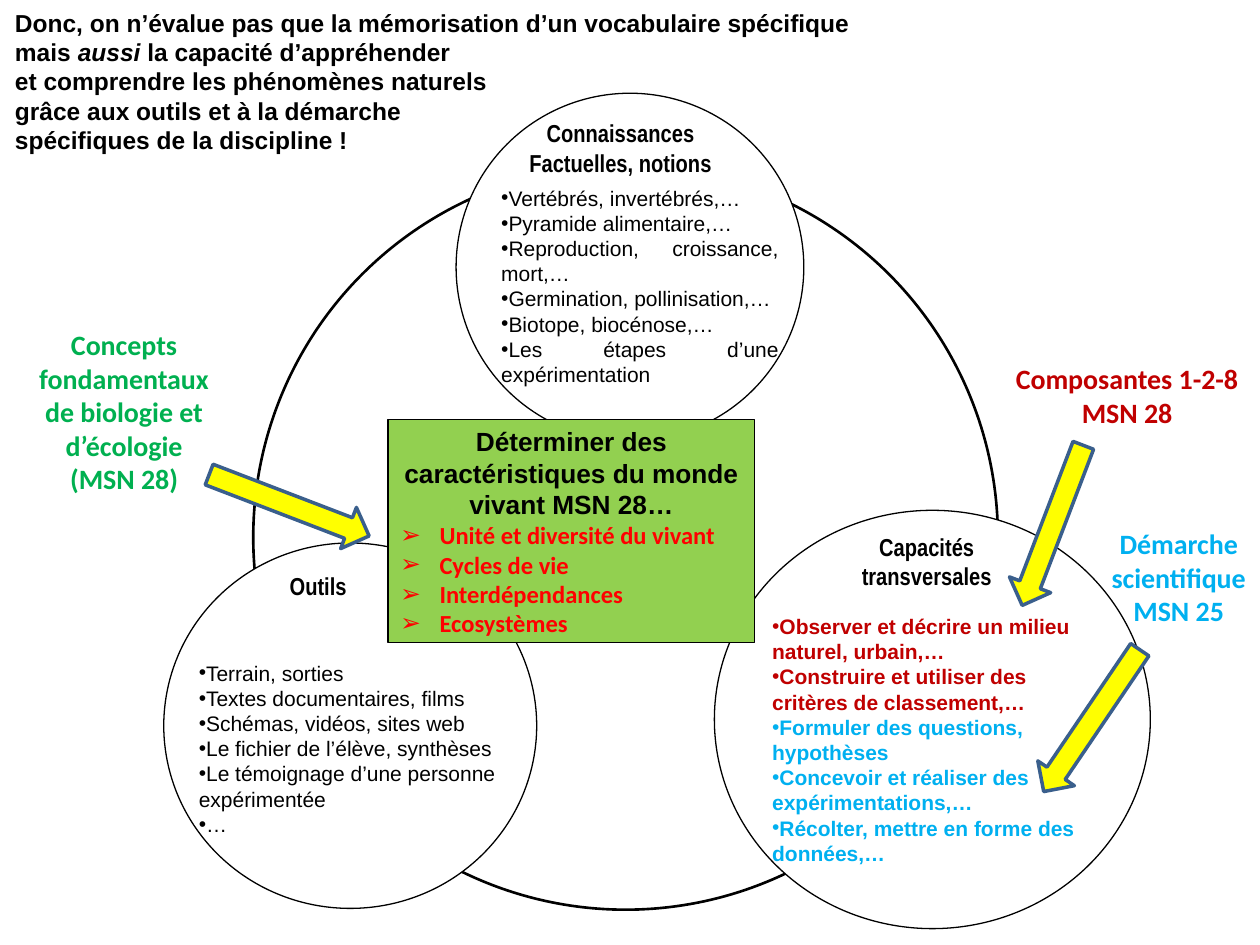
"""Build a slide of circles showing what is assessed in life sciences."""
import pptx
import pptx.dml.color
import pptx.enum.shapes
import pptx.enum.text
import pptx.oxml.ns
import pptx.util
import lxml.etree

Inches = pptx.util.Inches
Pt = pptx.util.Pt
RGBColor = pptx.dml.color.RGBColor
SHAPE = pptx.enum.shapes.MSO_SHAPE
ALIGN = pptx.enum.text.PP_ALIGN

BLACK = RGBColor(0x00, 0x00, 0x00)
WHITE = RGBColor(0xFF, 0xFF, 0xFF)
CRIMSON = RGBColor(0xC0, 0x00, 0x00)
RED = RGBColor(0xFF, 0x00, 0x00)
BLUE = RGBColor(0x00, 0xB0, 0xF0)
GREEN = RGBColor(0x00, 0xB0, 0x50)
LIME = RGBColor(0x92, 0xD0, 0x50)
YELLOW = RGBColor(0xFF, 0xFF, 0x00)
NAVY = RGBColor(0x3A, 0x5F, 0x8C)

TITLE = {"name": "Arial", "size": Pt(14), "bold": True}
HEAD = {"name": "Arial Narrow", "size": Pt(14), "bold": True}
BODY = {"name": "Arial", "size": Pt(12), "bold": False}
STRONG = {"name": "Arial", "size": Pt(12), "bold": True}
FOCUS = {"name": "Arial", "size": Pt(15), "bold": True}
THEME = {"name": "Calibri", "size": Pt(14), "bold": True}
LABEL = {"name": "Calibri", "size": Pt(16), "bold": True}


def mark(para, char, indent):
    """Give a paragraph a bullet with a hanging indent in inches."""
    props = para._p.get_or_add_pPr()
    props.set("marL", str(Inches(indent)))
    props.set("indent", str(-Inches(indent)))
    for tag, key, value in (("a:buFont", "typeface", "Arial"),
                            ("a:buChar", "char", char)):
        lxml.etree.SubElement(props, pptx.oxml.ns.qn(tag)).set(key, value)


def write(frame, lines, style, color=BLACK, align=ALIGN.LEFT, bullet=None, indent=0):
    """Append paragraphs to a frame, with *stars* around italic words."""
    for line in lines:
        para = frame.paragraphs[0]
        if para.runs:
            para = frame.add_paragraph()
        para.alignment = align
        if bullet:
            mark(para, bullet, indent)
        for place, part in enumerate(line.split("*")):
            run = para.add_run()
            run.text = part
            for key, value in style.items():
                setattr(run.font, key, value)
            run.font.italic = place % 2 == 1
            run.font.color.rgb = color


def note(slide, box, lines, style, **format):
    """Add a wrapped text box and return its frame."""
    frame = slide.shapes.add_textbox(*map(Inches, box)).text_frame
    frame.word_wrap = True
    write(frame, lines, style, **format)
    return frame


def draw(slide, kind, box, fill, line=BLACK, width=0.75, turn=0):
    """Add a preset shape with a plain fill and outline."""
    shape = slide.shapes.add_shape(kind, *map(Inches, box))
    shape.shadow.inherit = False
    shape.rotation = turn
    if fill is None:
        shape.fill.background()
    else:
        shape.fill.solid()
        shape.fill.fore_color.rgb = fill
    shape.line.color.rgb = line
    shape.line.width = Pt(width)
    return shape


def arrow(slide, left, top, turn):
    """Add a turned yellow arrow."""
    draw(slide, SHAPE.DOWN_ARROW, (left, top, 0.35, 1.36), YELLOW, NAVY, 2, turn)


def focus(slide):
    """Add the central box with its themes."""
    frame = draw(slide, SHAPE.RECTANGLE, (3.08, 3.33, 2.91, 1.77), LIME).text_frame
    frame.word_wrap = True
    frame.vertical_anchor = pptx.enum.text.MSO_ANCHOR.TOP
    write(frame, ["Déterminer des caractéristiques du monde vivant MSN 28…"],
          FOCUS, align=ALIGN.CENTER)
    write(frame, ["Unité et diversité du vivant", "Cycles de vie",
                  "Interdépendances", "Ecosystèmes"],
          THEME, RED, bullet="➢", indent=0.31)


def main():
    """Build and save the slide."""
    deck = pptx.Presentation()
    deck.slide_width, deck.slide_height = Inches(10), Inches(7.5)
    slide = deck.slides.add_slide(deck.slide_layouts[6])

    title = note(slide, (0.02, -0.11, 6.91, 1.69), [
        "Donc, on n’évalue pas que la mémorisation d’un vocabulaire spécifique",
        "mais *aussi* la capacité d’appréhender",
        "et comprendre les phénomènes naturels",
        "grâce aux outils et à la démarche",
        "spécifiques de la discipline !"], TITLE)
    title.margin_top = Inches(0.17)

    draw(slide, SHAPE.OVAL, (2.01, 1.31, 5.91, 5.91), None, width=1.5)
    for box in ((1.3, 4.31, 2.96, 2.9), (5.67, 4.05, 3.46, 3.32),
                (3.62, 0.74, 2.76, 2.76)):
        draw(slide, SHAPE.OVAL, box, WHITE)

    note(slide, (6.58, 4.17, 1.55, 0.67), ["Capacités", "transversales"],
         HEAD, align=ALIGN.CENTER)
    note(slide, (4.09, 0.89, 1.67, 0.78), ["Connaissances", "Factuelles, notions"],
         HEAD, align=ALIGN.CENTER)
    note(slide, (2.2, 4.48, 0.98, 0.36), ["Outils"], HEAD)

    skills = note(slide, (6.03, 4.82, 2.75, 2.29), [
        "Observer et décrire un milieu naturel, urbain,…",
        "Construire et utiliser des critères de classement,…"],
        STRONG, color=CRIMSON, bullet="•")
    write(skills, ["Formuler des questions, hypothèses",
                   "Concevoir et réaliser des expérimentations,…",
                   "Récolter, mettre en forme des données,…"],
          STRONG, BLUE, bullet="•")
    note(slide, (3.88, 1.42, 2.4, 1.93), [
        "Vertébrés, invertébrés,…", "Pyramide alimentaire,…",
        "Reproduction, croissance, mort,…", "Germination, pollinisation,…",
        "Biotope, biocénose,…", "Les étapes d’une expérimentation"],
        BODY, align=ALIGN.JUSTIFY, bullet="•")
    note(slide, (1.48, 5.19, 2.56, 1.54), [
        "Terrain, sorties", "Textes documentaires, films",
        "Schémas, vidéos, sites web", "Le fichier de l’élève, synthèses",
        "Le témoignage d’une personne expérimentée", "…"], BODY, bullet="•")

    focus(slide)
    for place in ((2.12, 3.33, 291), (8.18, 3.49, 20.9), (8.49, 5.04, 34.1)):
        arrow(slide, *place)
    for box, text, color in (
            ((0.16, 2.55, 1.65, 1.45),
             "Concepts fondamentaux de biologie et d’écologie (MSN 28)", GREEN),
            ((7.92, 2.82, 2.05, 0.64), "Composantes 1-2-8 MSN 28", CRIMSON),
            ((8.55, 4.13, 1.61, 0.91), "Démarche scientifique MSN 25", BLUE)):
        note(slide, box, [text], LABEL, color=color, align=ALIGN.CENTER)

    deck.save("out.pptx")


if __name__ == "__main__":
    main()
